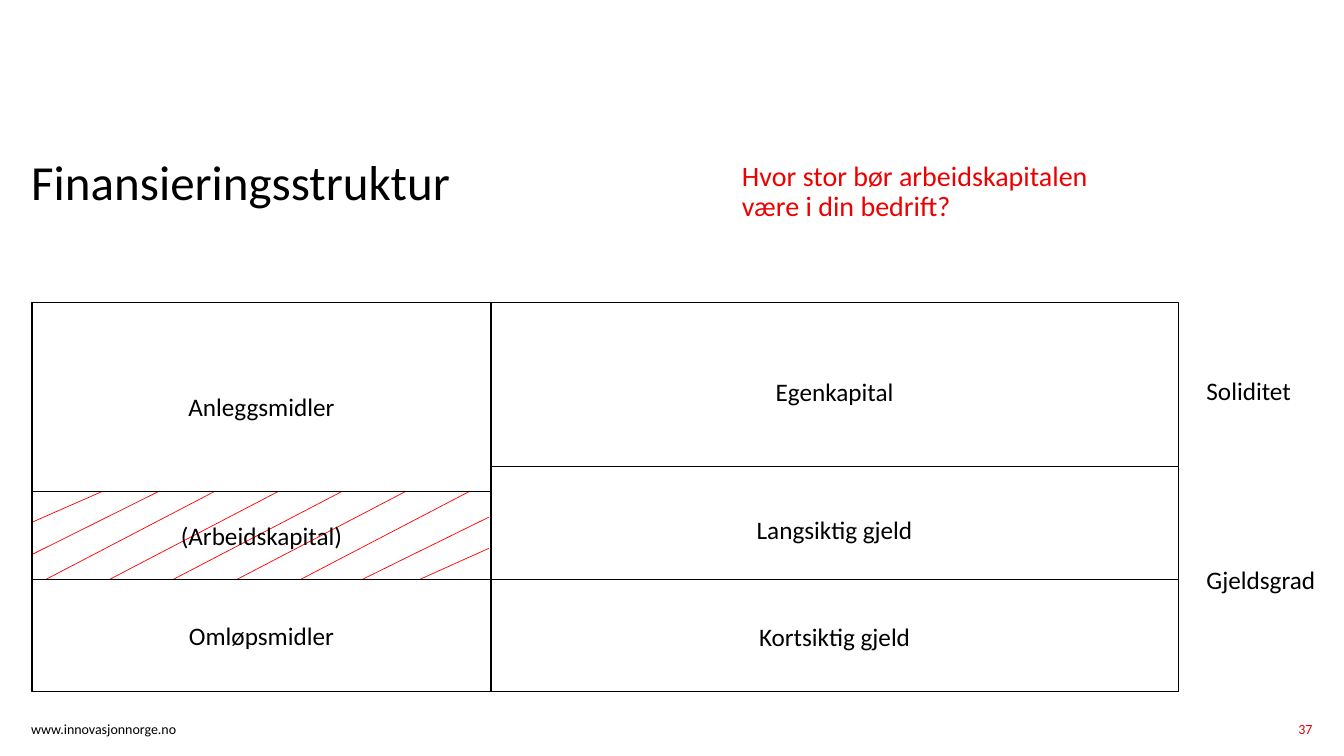
from pptx import Presentation
from pptx.dml.color import RGBColor
from pptx.enum.shapes import MSO_CONNECTOR, MSO_SHAPE
from pptx.enum.text import MSO_ANCHOR, PP_ALIGN
from pptx.util import Pt
from lxml import etree

LEFT, CENTER, RIGHT = PP_ALIGN.LEFT, PP_ALIGN.CENTER, PP_ALIGN.RIGHT
TOP, LINE, RECT = MSO_ANCHOR.TOP, MSO_CONNECTOR.STRAIGHT, MSO_SHAPE.RECTANGLE
A_NS = "http://schemas.openxmlformats.org/drawingml/2006/main"
FONT = "Calibri"
COLORS = {"black": "000000", "accent": "ED0000", "hatch": "FF0000"}

# Headings and footer: text, left, top, width, height, size, colour, align, spacing
HEADINGS = [
    ("www.innovasjonnorge.no", 22.3, 514.8, 205, 13.7, 10, "black", LEFT, 1),
    ("Finansieringsstruktur", 22.3, 113, 378, 103, 35, "black", LEFT, 0.9),
    ("Hvor stor bør arbeidskapitalen være i din bedrift?",
     530, 116, 281.5, 101.5, 20, "accent", LEFT, 0.9),
    ("37", 859.7, 514.8, 77.8, 17.3, 10, "accent", RIGHT, 1),
]

# Balance sheet: (name, cell bottom, label top) from the top down
SHEET_LEFT, SHEET_SPLIT, SHEET_RIGHT, SHEET_TOP = 23, 350.6, 841.7, 216
ASSETS = [("Anleggsmidler", 351.2, 282.2), ("(Arbeidskapital)", 414, 373.8),
          ("Omløpsmidler", 494, 445.8)]
FUNDING = [("Egenkapital", 333.4, 271.4), ("Langsiktig gjeld", 414, 369.5),
           ("Kortsiktig gjeld", 494, 446.4)]
KEY_FIGURES = [("Soliditet", 270.7), ("Gjeldsgrad", 405.5)]
LABEL_W, LABEL_H, KEY_LEFT, KEY_W = 293, 16.6, 861.8, 94

# Hatching: full strokes at an equal step, plus strokes cut by the cell sides
HATCH_TOP, HATCH_BOTTOM = ASSETS[0][1], ASSETS[1][1]
HATCH_START, HATCH_STEP, HATCH_RUN, HATCH_COUNT = 153, 45.5, 120.5, 5
CUT_STROKES = [
    (72.7, HATCH_TOP, SHEET_LEFT, 373), (113, HATCH_TOP, SHEET_LEFT, 396),
    (349.2, 369.4, 258.5, HATCH_BOTTOM), (349.2, 391.7, 299.5, HATCH_BOTTOM),
]

prs = Presentation()
prs.slide_width, prs.slide_height = Pt(960), Pt(540)
s = prs.slides.add_slide(prs.slide_layouts[6])


def rgb(name):
    return RGBColor.from_string(COLORS[name])


def add_text(text, x, y, w, h, size=18, color="black", align=CENTER, spacing=0.9):
    tf = s.shapes.add_textbox(Pt(x), Pt(y), Pt(w), Pt(h)).text_frame
    frame = {"word_wrap": True, "vertical_anchor": TOP, "margin_left": 0,
             "margin_right": 0, "margin_top": 0, "margin_bottom": 0}
    for key, value in frame.items():
        setattr(tf, key, value)
    p = tf.paragraphs[0]
    p.alignment, p.line_spacing = align, spacing
    r = p.add_run()
    r.text = text
    for key, value in {"name": FONT, "size": Pt(size)}.items():
        setattr(r.font, key, value)
    r.font.color.rgb = rgb(color)


def add_stroke(x1, y1, x2, y2):
    c = s.shapes.add_connector(LINE, Pt(x1), Pt(y1), Pt(x2), Pt(y2))
    c.line.color.rgb, c.line.width = rgb("hatch"), Pt(0.5)
    etree.SubElement(c._element.spPr, f"{{{A_NS}}}effectLst")


def add_cell(x, y, right, bottom):
    sp = s.shapes.add_shape(RECT, Pt(x), Pt(y), Pt(right - x), Pt(bottom - y))
    sp.shadow.inherit = False
    sp.fill.background()
    sp.line.color.rgb, sp.line.width = rgb("black"), Pt(1)


# Title, question and footer
for heading in HEADINGS:
    add_text(*heading)

# Hatching of the working capital
full_strokes = [(HATCH_START + i * HATCH_STEP, HATCH_TOP,
                 HATCH_START + i * HATCH_STEP - HATCH_RUN, HATCH_BOTTOM)
                for i in range(HATCH_COUNT)]
for stroke in full_strokes + CUT_STROKES:
    add_stroke(*stroke)

# Cells with their labels
for column, x, right in ((ASSETS, SHEET_LEFT, SHEET_SPLIT),
                         (FUNDING, SHEET_SPLIT, SHEET_RIGHT)):
    y = SHEET_TOP
    for name, bottom, label_top in column:
        add_cell(x, y, right, bottom)
        add_text(name, (x + right - LABEL_W) / 2, label_top, LABEL_W, LABEL_H)
        y = bottom

# Key figures beside the sheet
for name, label_top in KEY_FIGURES:
    add_text(name, KEY_LEFT, label_top, KEY_W, LABEL_H, align=LEFT)

prs.save("out.pptx")
